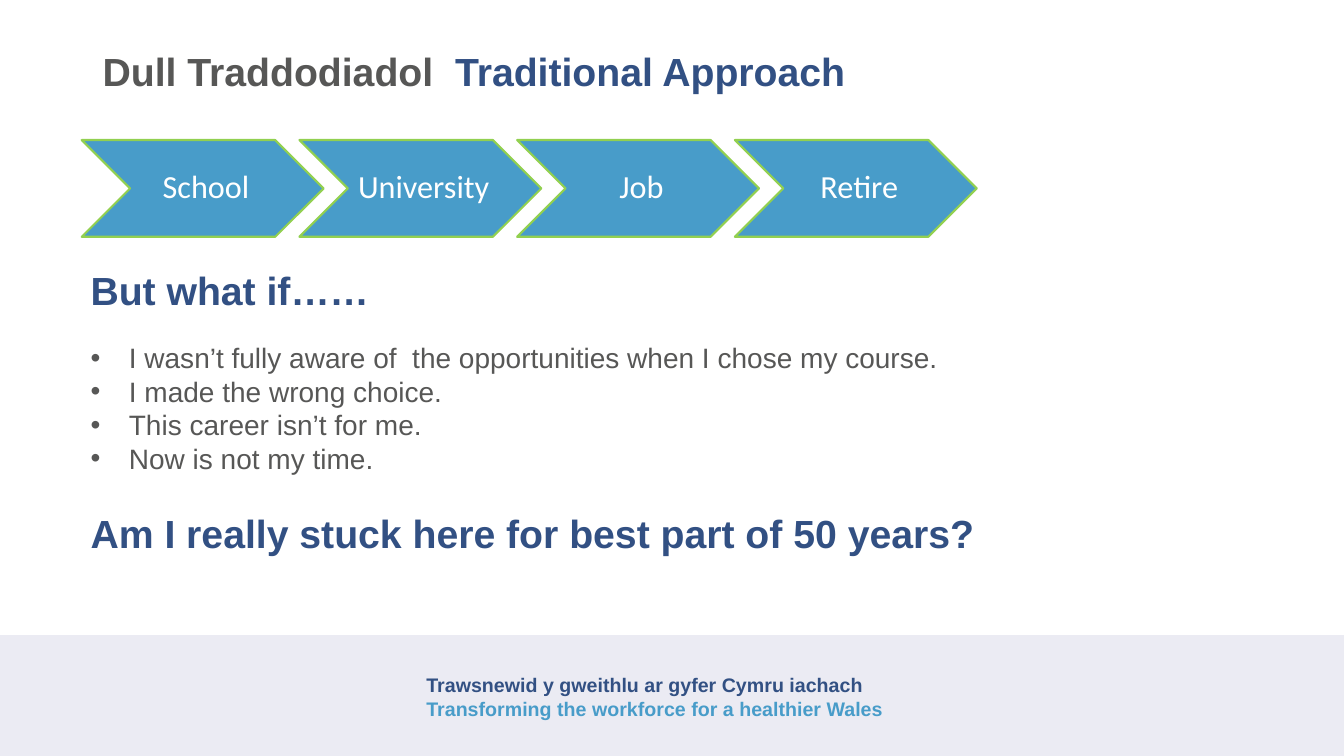
from dataclasses import dataclass

from lxml import etree
from pptx import Presentation
from pptx.dml.color import RGBColor
from pptx.enum.shapes import MSO_SHAPE
from pptx.enum.text import MSO_ANCHOR, PP_ALIGN
from pptx.oxml.ns import qn
from pptx.util import Inches, Pt

CHEVRON, RECTANGLE = MSO_SHAPE.CHEVRON, MSO_SHAPE.RECTANGLE
TOP, MIDDLE = MSO_ANCHOR.TOP, MSO_ANCHOR.MIDDLE
CENTER = PP_ALIGN.CENTER

WHITE = RGBColor(0xFF, 0xFF, 0xFF)
GREY = RGBColor(0x57, 0x57, 0x56)
NAVY = RGBColor(0x32, 0x50, 0x83)
BLUE = RGBColor(0x48, 0x9C, 0xC9)
GREEN = RGBColor(0x92, 0xD0, 0x50)
LAVENDER = RGBColor(0xEB, 0xEB, 0xF3)

SLIDE_WIDTH, SLIDE_HEIGHT = Inches(13.33), Inches(7.5)
BULLET_INDENT = Inches(0.38)


@dataclass(frozen=True)
class Area:
    """A place on the slide, in percent of its width and height."""
    left: float
    top: float
    width: float
    height: float

    def lengths(self) -> tuple[int, int, int, int]:
        return (int(SLIDE_WIDTH * self.left / 100), int(SLIDE_HEIGHT * self.top / 100),
                int(SLIDE_WIDTH * self.width / 100), int(SLIDE_HEIGHT * self.height / 100))


@dataclass(frozen=True)
class Span:
    text: str
    color: RGBColor
    size: int
    bold: bool = True
    font: str = "Arial"


@dataclass(frozen=True)
class TextBlock:
    area: Area
    lines: list[list[Span]]
    anchor: MSO_ANCHOR = TOP
    spacing: float = 1.0
    bulleted: bool = False


def add_span(para, span: Span) -> None:
    run = para.add_run()
    run.text = span.text
    run.font.name = span.font
    run.font.size = Pt(span.size)
    run.font.bold = span.bold
    run.font.color.rgb = span.color


def add_bullet(para) -> None:
    properties = para._p.get_or_add_pPr()
    properties.set("marL", str(BULLET_INDENT))
    properties.set("indent", str(-BULLET_INDENT))
    etree.SubElement(properties, qn("a:buFont")).set("typeface", "Arial")
    etree.SubElement(properties, qn("a:buChar")).set("char", "•")


def add_text(page, block: TextBlock) -> None:
    frame = page.shapes.add_textbox(*block.area.lengths()).text_frame
    frame.word_wrap = True
    frame.vertical_anchor = block.anchor
    for index, line in enumerate(block.lines):
        para = frame.add_paragraph() if index else frame.paragraphs[0]
        if block.bulleted:
            add_bullet(para)
        para.line_spacing = block.spacing
        for span in line:
            add_span(para, span)


def add_filled_shape(page, kind: MSO_SHAPE, area: Area, fill: RGBColor):
    shape = page.shapes.add_shape(kind, *area.lengths())
    shape.shadow.inherit = False
    shape.fill.solid()
    shape.fill.fore_color.rgb = fill
    shape.line.fill.background()
    return shape


def add_stage(page, label: str, area: Area) -> None:
    chevron = add_filled_shape(page, CHEVRON, area, BLUE)
    chevron.line.color.rgb = GREEN
    chevron.line.width = Pt(1.5)
    frame = chevron.text_frame
    frame.word_wrap = False
    frame.vertical_anchor = MIDDLE
    frame.margin_left = Inches(0.1)
    frame.margin_right = frame.margin_top = frame.margin_bottom = Inches(0.03)
    para = frame.paragraphs[0]
    para.alignment = CENTER
    para.line_spacing = 0.9
    add_span(para, Span(label, WHITE, 23, bold=False, font="Calibri"))


FOOTER_BAND = Area(0, 84, 100, 16)
FIRST_STAGE = Area(6.08, 18.53, 18, 12.8)
STAGE_STEP = FIRST_STAGE.width * 0.9
STAGES = ["School", "University", "Job", "Retire"]
DOUBTS = [
    "I wasn’t fully aware of  the opportunities when I chose my course.",
    "I made the wrong choice.",
    "This career isn’t for me.",
    "Now is not my time.",
]
TEXT_BLOCKS = [
    # Footer slogan
    TextBlock(Area(30.98, 88.4, 37.5, 7.6),
              [[Span("Trawsnewid y gweithlu ar gyfer Cymru iachach", NAVY, 14)],
               [Span("Transforming the workforce for a healthier Wales", BLUE, 14)]]),
    # Title
    TextBlock(Area(6.9, 0.13, 86.27, 19.33),
              [[Span("Dull Traddodiadol  ", GREY, 28), Span("Traditional Approach", NAVY, 28)]],
              MIDDLE, 0.9),
    # Doubts
    TextBlock(Area(6, 44.4, 73.9, 24.67),
              [[Span(doubt, GREY, 20, bold=False)] for doubt in DOUBTS], bulleted=True),
    # Questions
    TextBlock(Area(6, 32.93, 34.36, 11.6),
              [[Span("But what if……", NAVY, 28)]], MIDDLE, 0.9),
    TextBlock(Area(6, 67.4, 73.9, 11.6),
              [[Span("Am I really stuck here for best part of 50 years?", NAVY, 28)]], TOP, 0.9),
]


def main() -> None:
    deck = Presentation()
    deck.slide_width, deck.slide_height = SLIDE_WIDTH, SLIDE_HEIGHT
    page = deck.slides.add_slide(deck.slide_layouts[6])

    # Footer band
    add_filled_shape(page, RECTANGLE, FOOTER_BAND, LAVENDER)

    # Career stages
    for index, label in enumerate(STAGES):
        left = FIRST_STAGE.left + index * STAGE_STEP
        add_stage(page, label, Area(left, FIRST_STAGE.top, FIRST_STAGE.width, FIRST_STAGE.height))

    # Texts
    for block in TEXT_BLOCKS:
        add_text(page, block)

    deck.save("out.pptx")


if __name__ == "__main__":
    main()
